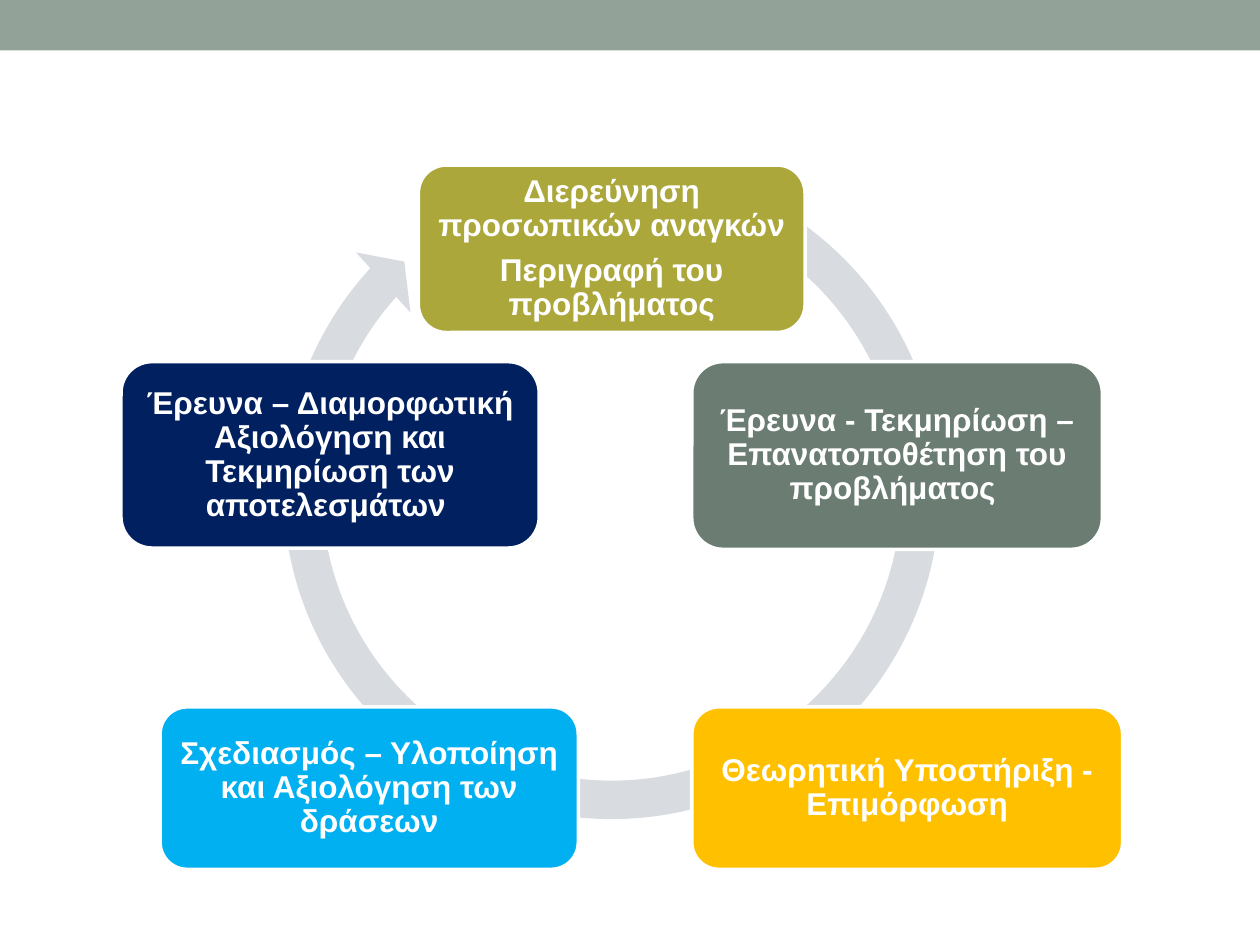
"""Build a slide with a five-step cycle of research and action."""
from pptx import Presentation
from pptx.dml.color import RGBColor
from pptx.enum.shapes import MSO_SHAPE as Shape
from pptx.enum.text import MSO_ANCHOR as Anchor, PP_ALIGN as Align
from pptx.util import Inches, Pt

WHITE = "FFFFFF"
BAR = ((0, 0, 10, 0.4), "93A299")
RING = ((2.08, 1.12, 5.55, 5.55), "D8DBDF")
RING_ADJUSTMENTS = (0.055, 3.307, 133.409, 176.568, 0.058)
STEPS = [
    ((3.32, 1.31, 3.07, 1.33), "ACA73B",
     ["Διερεύνηση προσωπικών αναγκών ", "Περιγραφή του προβλήματος"]),
    ((5.49, 2.87, 3.26, 1.49), "6B7D72",
     ["Έρευνα - Τεκμηρίωση – Επανατοποθέτηση του προβλήματος "]),
    ((5.49, 5.61, 3.42, 1.29), "FFC000",
     ["Θεωρητική Υποστήριξη - Επιμόρφωση"]),
    ((1.27, 5.61, 3.32, 1.29), "00B0F0",
     ["Σχεδιασμός – Υλοποίηση και Αξιολόγηση των δράσεων"]),
    ((0.96, 2.87, 3.32, 1.48), "002060",
     ["Έρευνα – Διαμορφωτική Αξιολόγηση και Τεκμηρίωση των αποτελεσμάτων "]),
]


def paint(fmt, color):
    fmt.solid()
    fmt.fore_color.rgb = RGBColor.from_string(color)


def add_shape(s, kind, box, color):
    sp = s.shapes.add_shape(kind, *map(Inches, box))
    sp.shadow.inherit = False
    paint(sp.fill, color)
    sp.line.fill.background()
    return sp


def add_step(s, box, color, lines):
    sp = add_shape(s, Shape.ROUNDED_RECTANGLE, box, color)
    paint(sp.line.fill, WHITE)
    sp.line.width = Pt(2.08)
    tf = sp.text_frame
    tf.word_wrap = True
    tf.vertical_anchor = Anchor.MIDDLE
    tf.margin_left = tf.margin_right = tf.margin_top = tf.margin_bottom = Inches(0.07)
    tf.text = "\n".join(lines)
    for p in tf.paragraphs:
        p.alignment = Align.CENTER
        p.line_spacing = 0.9
        p.space_after = Pt(6.3)
        for r in p.runs:
            r.font.name = "Arial"
            r.font.size = Pt(18)
            r.font.bold = True
            paint(r.font.fill, WHITE)


def main():
    prs = Presentation()
    prs.slide_width, prs.slide_height = Inches(10), Inches(7.5)
    s = prs.slides.add_slide(prs.slide_layouts[6])
    add_shape(s, Shape.RECTANGLE, *BAR)
    ring = add_shape(s, Shape.CIRCULAR_ARROW, *RING)
    for i, value in enumerate(RING_ADJUSTMENTS):
        ring.adjustments[i] = value
    for step in STEPS:
        add_step(s, *step)
    prs.save("out.pptx")


if __name__ == "__main__":
    main()
